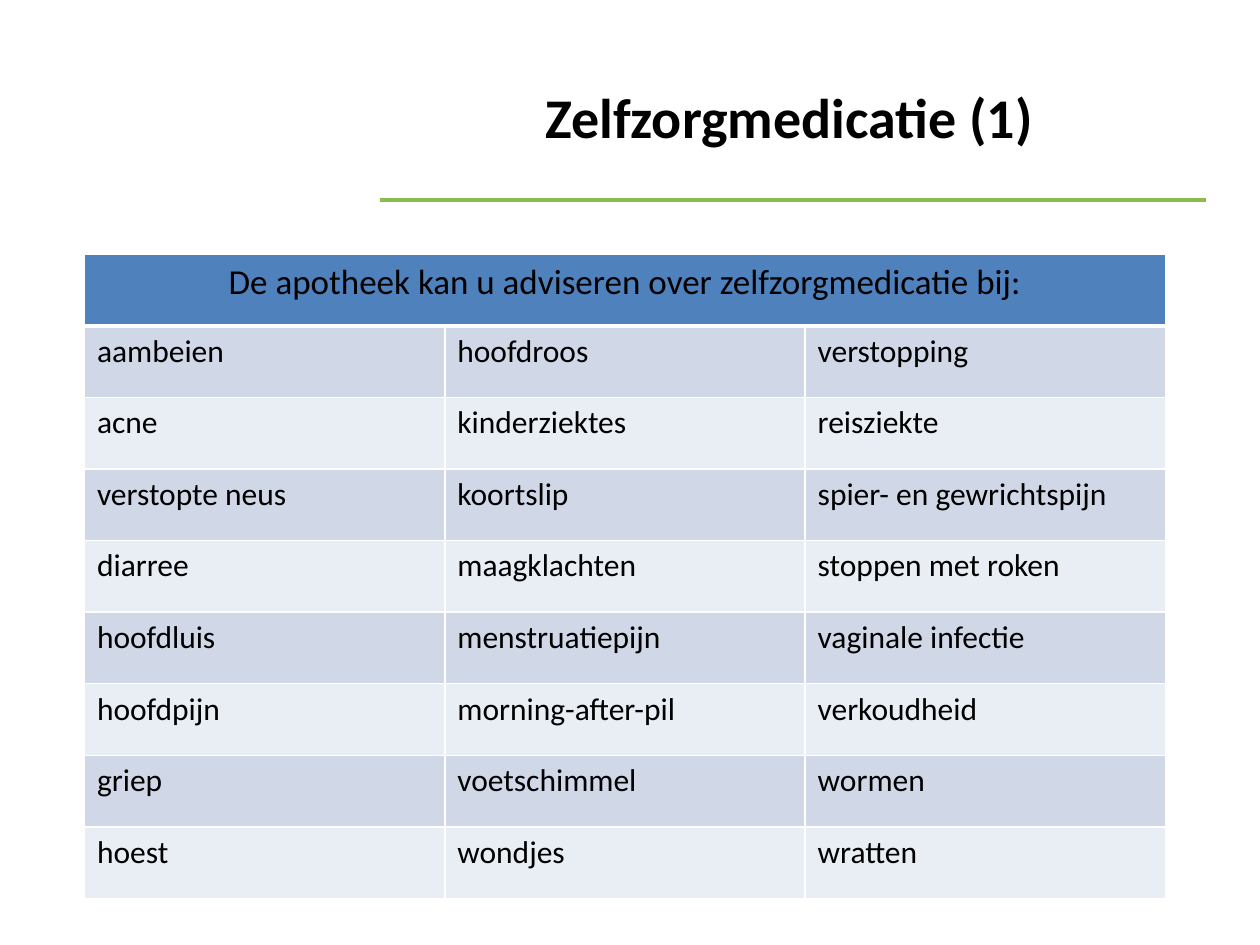
import pptx
import pptx.dml.color
import pptx.enum.shapes
import pptx.enum.text
import pptx.oxml.ns
import pptx.util
from lxml import etree
from pptx.util import Inches

ALIGN = pptx.enum.text.PP_ALIGN
ANCHOR = pptx.enum.text.MSO_ANCHOR
BLACK, WHITE, GREEN, BLUE = "000000", "FFFFFF", "8BBB4B", "4F81BD"
BANDS = ("D0D8E8", "E9EDF4")
TITLE = "Zelfzorgmedicatie (1)"
HEADING = "De apotheek kan u adviseren over zelfzorgmedicatie bij:"
COMPLAINTS = [
    ("aambeien", "hoofdroos", "verstopping"),
    ("acne", "kinderziektes", "reisziekte"),
    ("verstopte neus", "koortslip", "spier- en gewrichtspijn"),
    ("diarree", "maagklachten", "stoppen met roken"),
    ("hoofdluis", "menstruatiepijn", "vaginale infectie"),
    ("hoofdpijn", "morning-after-pil", "verkoudheid"),
    ("griep", "voetschimmel", "wormen"),
    ("hoest", "wondjes", "wratten"),
]


def rgb(value):
    return pptx.dml.color.RGBColor.from_string(value)


def write(tf, text, size, align=ALIGN.LEFT, bold=False):
    p = tf.paragraphs[0]
    p.alignment = align
    r = p.add_run()
    r.text = text
    style = {"name": "Calibri", "size": pptx.util.Pt(size), "bold": bold}
    for name, value in style.items():
        setattr(r.font, name, value)
    r.font.color.rgb = rgb(BLACK)


def add_borders(cell, bottom=1):
    """Draw white borders; call before the cell is filled, as the schema orders it."""
    tc_pr = cell._tc.get_or_add_tcPr()
    qn = pptx.oxml.ns.qn
    for side, width in {"L": 1, "R": 1, "T": 1, "B": bottom}.items():
        ln = etree.SubElement(tc_pr, qn(f"a:ln{side}"), w=str(pptx.util.Pt(width)))
        fill = etree.SubElement(ln, qn("a:solidFill"))
        etree.SubElement(fill, qn("a:srgbClr"), val=WHITE)


def fill_cell(cell, color, bottom=1):
    add_borders(cell, bottom)
    cell.fill.solid()
    cell.fill.fore_color.rgb = rgb(color)


def add_title(slide, left, top, width, height):
    sp = slide.shapes.add_textbox(left, top, width, height)
    tf = sp.text_frame
    tf.word_wrap = True
    tf.vertical_anchor = ANCHOR.MIDDLE
    write(tf, TITLE, 32, ALIGN.CENTER, bold=True)


def add_rule(slide, left, top, width):
    line = slide.shapes.add_connector(
        pptx.enum.shapes.MSO_CONNECTOR.STRAIGHT, left, top, left + width, top)
    line.line.color.rgb = rgb(GREEN)
    line.line.width = pptx.util.Pt(2.25)
    etree.SubElement(line._element.spPr, pptx.oxml.ns.qn("a:effectLst"))


def add_complaints(slide, left, top, width, height):
    rows, cols = len(COMPLAINTS) + 1, len(COMPLAINTS[0])
    table = slide.shapes.add_table(rows, cols, left, top, width, height).table
    table.first_row = table.horz_banding = False
    for cell in table.rows[0].cells:
        fill_cell(cell, BLUE, bottom=3)
    heading = table.cell(0, 0)
    heading.merge(table.cell(0, cols - 1))
    write(heading.text_frame, HEADING, 20, ALIGN.CENTER)
    for i, names in enumerate(COMPLAINTS):
        for j, name in enumerate(names):
            cell = table.cell(i + 1, j)
            fill_cell(cell, BANDS[i % 2])
            write(cell.text_frame, name, 18)


def main():
    prs = pptx.Presentation()
    prs.slide_width, prs.slide_height = Inches(10), Inches(7.5)
    slide = prs.slides.add_slide(prs.slide_layouts[6])
    add_rule(slide, Inches(3.02), Inches(1.59), Inches(6.55))
    add_title(slide, Inches(3.03), Inches(0.3), Inches(6.47), Inches(1.25))
    add_complaints(slide, Inches(0.67), Inches(2.02), Inches(8.58), Inches(5.11))
    prs.save("out.pptx")


if __name__ == "__main__":
    main()
